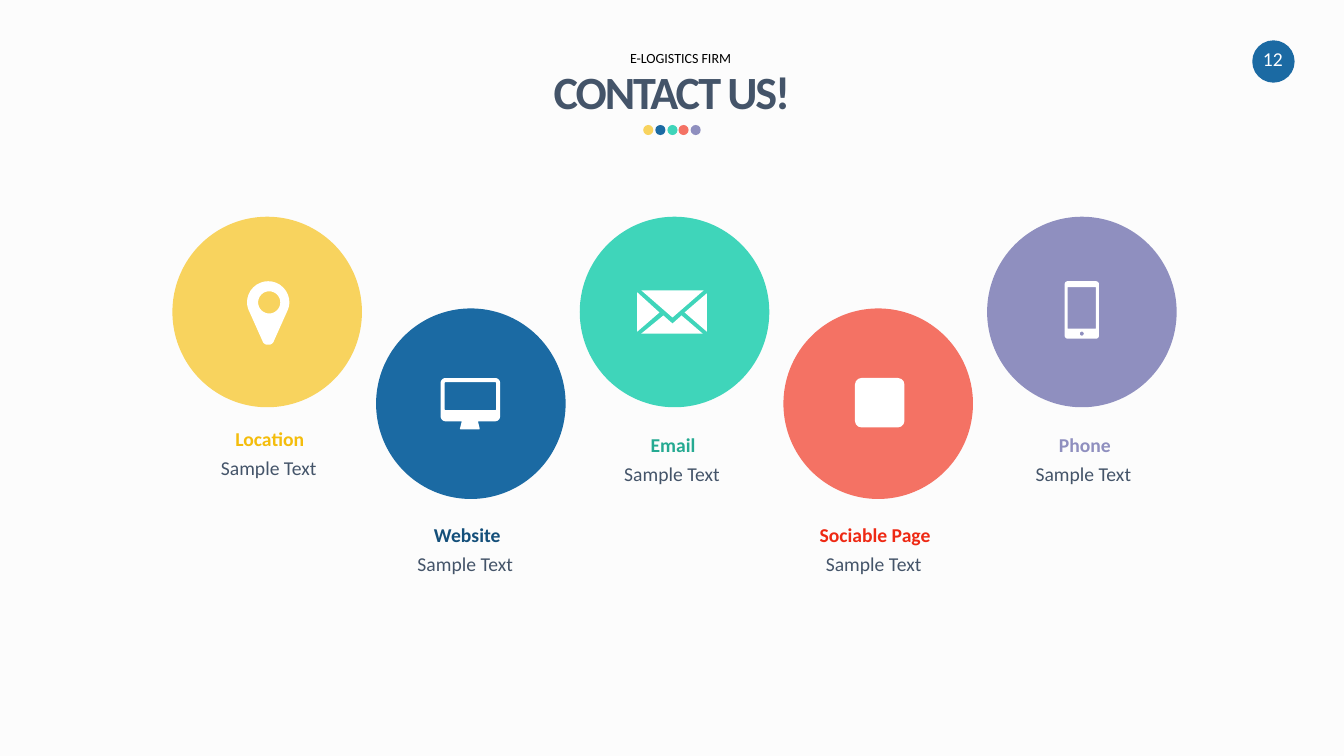
from math import hypot, sqrt
from pptx import Presentation
from pptx.dml.color import RGBColor
from pptx.enum.shapes import MSO_SHAPE
from pptx.enum.text import MSO_ANCHOR, MSO_AUTO_SIZE, PP_ALIGN
from pptx.util import Pt

PX = 9144
YELLOW = RGBColor(0xF8, 0xD3, 0x5E)
BLUE = RGBColor(0x1B, 0x6A, 0xA3)
TEAL = RGBColor(0x3F, 0xD5, 0xBA)
CORAL = RGBColor(0xF4, 0x72, 0x64)
LILAC = RGBColor(0x8F, 0x8F, 0xBF)
GOLD = RGBColor(0xF4, 0xBD, 0x0C)
NAVY = RGBColor(0x14, 0x4F, 0x7A)
GREEN = RGBColor(0x25, 0xAA, 0x92)
RED = RGBColor(0xEE, 0x29, 0x14)
SLATE = RGBColor(0x44, 0x54, 0x69)
BLACK = RGBColor(0, 0, 0)
WHITE = RGBColor(0xFF, 0xFF, 0xFF)
PAPER = RGBColor(0xFC, 0xFC, 0xFC)
PALETTE = [YELLOW, BLUE, TEAL, CORAL, LILAC]


def write(box, text, size, colour, bold=False, wrap=False):
    frame = box.text_frame
    frame.text = text
    frame.word_wrap = wrap
    frame.auto_size = MSO_AUTO_SIZE.SHAPE_TO_FIT_TEXT
    frame.vertical_anchor = MSO_ANCHOR.TOP
    para = frame.paragraphs[0]
    para.alignment = PP_ALIGN.CENTER
    span = para.runs[0]
    span.font.name = "Calibri"
    span.font.size = Pt(size)
    span.font.bold = bold
    span.font.color.rgb = colour
    return para


def draw(shapes, contours):
    builder = None
    for corners in contours:
        points = []
        for index, (x, y, radius) in enumerate(corners):
            if not radius:
                points.append((x * PX, y * PX))
                continue
            ends = []
            for near_x, near_y, _ in (corners[index - 1], corners[(index + 1) % len(corners)]):
                share = radius / hypot(near_x - x, near_y - y)
                ends.append((x + (near_x - x) * share, y + (near_y - y) * share))
            for step in range(9):
                t = step / 8
                weights = ((1 - t) ** 2, sqrt(2) * t * (1 - t), t ** 2)
                curve = (ends[0], (x, y), ends[1])
                points.append(tuple(
                    PX * sum(w * point[axis] for w, point in zip(weights, curve)) / sum(weights)
                    for axis in (0, 1)))
        if builder is None:
            builder = shapes.build_freeform(*points[0], scale=1.0)
        else:
            builder.move_to(*points[0])
        builder.add_line_segments(points[1:], close=True)
    icon = builder.convert_to_shape()
    icon.shadow.inherit = False
    icon.fill.solid()
    icon.fill.fore_color.rgb = WHITE
    icon.line.fill.background()


deck = Presentation()
deck.slide_width = 1333 * PX
deck.slide_height = 750 * PX
page = deck.slides.add_slide(deck.slide_layouts[5])
page.background.fill.solid()
page.background.fill.fore_color.rgb = PAPER

title = page.shapes.title
title.left, title.top, title.width, title.height = (n * PX for n in (547, 63, 239, 56))
heading = write(title, "CONTACT US!", 33, SLATE, bold=True)
heading.runs[0]._r.get_or_add_rPr().set("spc", "-150")
frame = title.text_frame
frame.margin_left = frame.margin_right = frame.margin_top = frame.margin_bottom = 0

firm = page.shapes.add_textbox(608 * PX, 44 * PX, 134 * PX, 27 * PX)
write(firm, "E-LOGISTICS FIRM", 10, BLACK, wrap=True)

dots = page.shapes.add_group_shape()
discs = [(page.shapes, 1242, 40, 42, 42, BLUE)]
for index, colour in enumerate(PALETTE):
    discs.append((dots.shapes, 638 + round(11.75 * index), 124, 10, 10, colour))
    discs.append((page.shapes, 171 + 202 * index, 215 + 91 * (index % 2), 188, 189, colour))
for shapes, left, top, width, height, colour in discs:
    disc = shapes.add_shape(MSO_SHAPE.OVAL, left * PX, top * PX, width * PX, height * PX)
    disc.shadow.inherit = False
    disc.fill.solid()
    disc.fill.fore_color.rgb = colour
    disc.line.fill.background()

number = page.shapes.add_textbox(1241 * PX, 42 * PX, 43 * PX, 34 * PX)
write(number, "12", 14, WHITE)

contacts = [
    ("Location", GOLD, 223, 89, 157, 419),
    ("Website", NAVY, 420, 87, 352, 514),
    ("Email", GREEN, 635, 65, 557, 425),
    ("Sociable Page", RED, 798, 140, 757, 514),
    ("Phone", LILAC, 1040, 72, 965, 425),
]
for name, colour, left, width, detail_left, top in contacts:
    detail = page.shapes.add_textbox(detail_left * PX, (top + 31) * PX, 219 * PX, 33 * PX)
    write(detail, "Sample Text", 14, SLATE, wrap=True).line_spacing = 0.89
    frame = detail.text_frame
    frame.margin_left = frame.margin_right = 27 * PX
    frame.margin_top, frame.margin_bottom = 5 * PX, 7 * PX
    label = page.shapes.add_textbox(left * PX, top * PX, width * PX, 34 * PX)
    write(label, name, 14, colour, bold=True)

pin = [(245, 279, 21), (287, 279, 21), (287, 304, 4), (270, 342, 3), (262, 342, 3), (245, 304, 4)]
pin_hole = [(256, 289, 11), (278, 289, 11), (278, 311, 11), (256, 311, 11)]
draw(page.shapes, [pin, pin_hole])

monitor = [(437, 375, 5), (496, 375, 5), (496, 418, 5), (474, 418, 0), (476, 426, 1),
           (456, 426, 1), (458, 418, 0), (437, 418, 5)]
monitor_screen = [(441, 379, 1), (492, 379, 1), (492, 407, 1), (441, 407, 1)]
draw(page.shapes, [monitor, monitor_screen])

phone = [(1056, 279, 3), (1090, 279, 3), (1090, 336, 3), (1056, 336, 3)]
phone_screen = [(1059, 285, 0), (1087, 285, 0), (1087, 326, 0), (1059, 326, 0)]
phone_button = [(1071, 329, 2), (1075, 329, 2), (1075, 333, 2), (1071, 333, 2)]
draw(page.shapes, [phone, phone_screen, phone_button])

envelope = page.shapes.add_group_shape()
for flap in (
    [(636, 288, 0), (698, 288, 0), (667, 315, 0)],
    [(701, 291, 0), (679, 310, 0), (701, 329, 0)],
    [(632, 290, 0), (654, 310, 0), (632, 329, 0)],
    [(667, 321, 0), (658, 313, 0), (636, 331, 0), (697, 331, 0), (676, 313, 0)],
):
    draw(envelope.shapes, [flap])

badge = page.shapes.add_shape(MSO_SHAPE.ROUNDED_RECTANGLE, 848 * PX, 375 * PX, 49 * PX, 49 * PX)
badge.adjustments[0] = 0.13
badge.shadow.inherit = False
badge.fill.solid()
badge.fill.fore_color.rgb = WHITE
badge.line.fill.background()

deck.save("out.pptx")
